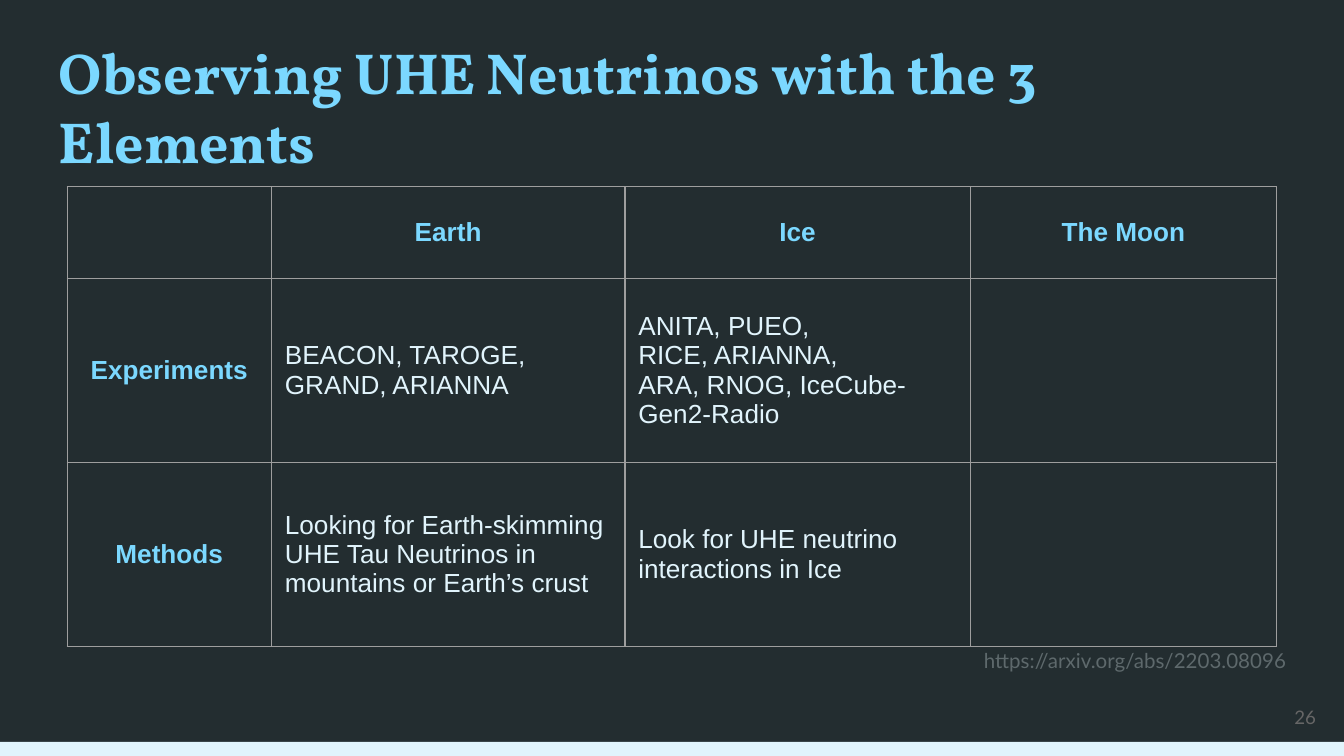
from lxml import etree
from pptx import Presentation
from pptx.dml.color import RGBColor
from pptx.enum import shapes, text
from pptx.oxml import ns
from pptx.util import Inches, Pt

SKY, PALE, DARK, EDGE = "7BD8FF", "E1F4FC", "232D30", "9E9E9E"
LEFT, MID, RIGHT = text.PP_ALIGN.LEFT, text.PP_ALIGN.CENTER, text.PP_ALIGN.RIGHT
COLS = [1.52, 2.63, 2.57, 2.28]
ROWS = [0.68, 1.37, 1.37]
CELLS = [
    ["", "Earth", "Ice", "The Moon"],
    ["Experiments", "BEACON, TAROGE, GRAND, ARIANNA",
     "ANITA, PUEO,\nRICE, ARIANNA,\nARA, RNOG, IceCube-Gen2-Radio", ""],
    ["Methods",
     "Looking for Earth-skimming UHE Tau Neutrinos in mountains or Earth’s crust",
     "Look for UHE neutrino interactions in Ice", ""],
]


def paint(fill, color):
    fill.solid()
    fill.fore_color.rgb = RGBColor.from_string(color)


def write(frame, words, font, size, color, bold=False, align=LEFT):
    frame.text = words
    for para in frame.paragraphs:
        para.alignment = align
        for run in para.runs:
            run.font.name = font
            run.font.size = Pt(size)
            run.font.bold = bold
            run.font.color.rgb = RGBColor.from_string(color)


def pad(item):
    item.margin_left = item.margin_right = Inches(0.1)
    item.margin_top = item.margin_bottom = Inches(0.1)


def add_text(slide, box, words, anchor=text.MSO_ANCHOR.TOP, **style):
    frame = slide.shapes.add_textbox(*map(Inches, box)).text_frame
    frame.word_wrap = True
    frame.vertical_anchor = anchor
    pad(frame)
    write(frame, words, **style)


def add_bar(slide, box, color):
    bar = slide.shapes.add_shape(shapes.MSO_SHAPE.RECTANGLE, *map(Inches, box))
    bar.shadow.inherit = False
    paint(bar.fill, color)
    bar.line.fill.background()


def add_edges(cell, color, width):
    props = cell._tc.get_or_add_tcPr()
    for spot, side in enumerate(("lnL", "lnR", "lnT", "lnB")):
        line = etree.Element(ns.qn("a:" + side), w=str(Pt(width)))
        fill = etree.SubElement(line, ns.qn("a:solidFill"))
        etree.SubElement(fill, ns.qn("a:srgbClr"), val=color)
        props.insert(spot, line)


def add_grid(slide, left, top):
    size = map(Inches, (left, top, sum(COLS), sum(ROWS)))
    grid = slide.shapes.add_table(len(ROWS), len(COLS), *size).table
    for col, width in zip(grid.columns, COLS):
        col.width = Inches(width)
    for r, (row, high) in enumerate(zip(grid.rows, ROWS)):
        row.height = Inches(high)
        for c, cell in enumerate(row.cells):
            head = r == 0 or c == 0
            cell.fill.background()
            cell.vertical_anchor = text.MSO_ANCHOR.MIDDLE
            pad(cell)
            write(cell.text_frame, CELLS[r][c], "Arial", 14,
                  SKY if head else PALE, head, MID if head else LEFT)
            add_edges(cell, EDGE, 0.75)


def main():
    deck = Presentation()
    deck.slide_width = Inches(10)
    deck.slide_height = deck.slide_width * 9 // 16
    slide = deck.slides.add_slide(deck.slide_layouts[6])
    paint(slide.background.fill, DARK)
    add_bar(slide, (0, 5.52, 10, 0.11), PALE)
    add_text(slide, (9.29, 5.12, 0.6, 0.43), "26", text.MSO_ANCHOR.MIDDLE,
             font="Lato", size=10, color="666666", align=RIGHT)
    add_text(slide, (0.34, 0.17, 9.32, 0.68),
             "Observing UHE Neutrinos with the 3 Elements",
             font="Vollkorn", size=31, color=SKY, bold=True)
    add_text(slide, (7.07, 4.73, 2.6, 0.39), "https://arxiv.org/abs/2203.08096",
             font="Lato", size=11, color="5E696C", align=RIGHT)
    add_grid(slide, 0.5, 1.39)
    deck.save("out.pptx")


if __name__ == "__main__":
    main()
